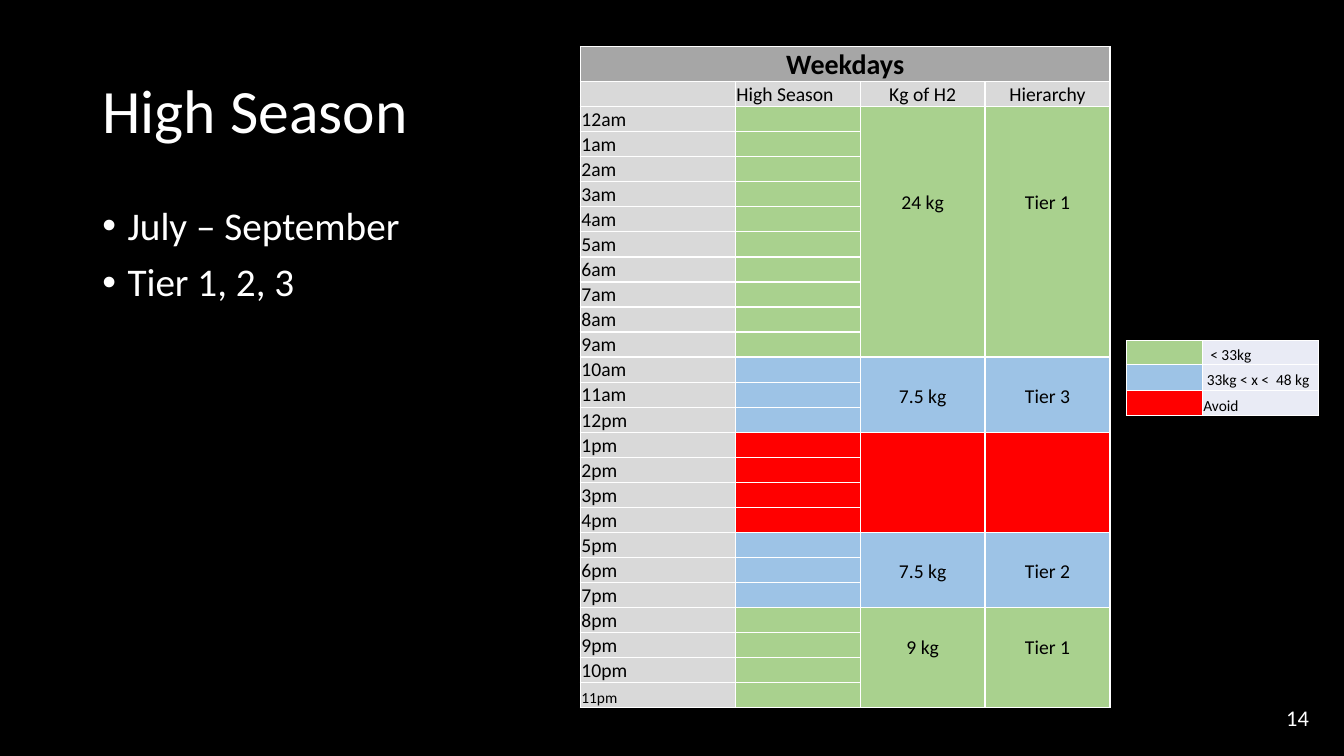
"""Build the High Season slide with its weekday tariff schedule."""
from dataclasses import dataclass

from pptx import Presentation
from pptx.dml.color import RGBColor
from pptx.enum.text import MSO_ANCHOR, PP_ALIGN
from pptx.oxml.xmlchemy import OxmlElement
from pptx.slide import Slide
from pptx.util import Pt


@dataclass(frozen=True)
class Theme:
    """Colours, typeface and type sizes."""
    font: str = "Calibri"
    background: str = "000000"
    light: str = "FFFFFF"
    dark: str = "000000"
    banner: str = "A6A6A6"
    label: str = "D9D9D9"
    legend: str = "E9EBF5"
    green: str = "A9D18E"
    blue: str = "9DC3E6"
    red: str = "FF0000"
    title_size: float = 44
    body_size: float = 28
    number_size: float = 16
    banner_size: float = 20
    table_size: float = 14
    small_size: float = 11
    cell_margin: float = 0.7
    border: float = 1


@dataclass
class SlideBuilder:
    """Draw styled elements on the current slide."""
    theme: Theme
    slide: Slide

    def background(self):
        """Fill the slide background."""
        fill = self.slide.background.fill
        fill.solid()
        fill.fore_color.rgb = RGBColor.from_string(self.theme.background)

    def style(self, paragraph, size, color, bold=False):
        """Format every run of a paragraph."""
        for run in paragraph.runs:
            run.font.name = self.theme.font
            run.font.size = Pt(size)
            run.font.bold = bold
            run.font.color.rgb = RGBColor.from_string(color)

    def title(self, text, left, top, width, height):
        """Place and format the title placeholder."""
        shape = self.slide.shapes.title
        shape.left, shape.top = Pt(left), Pt(top)
        shape.width, shape.height = Pt(width), Pt(height)
        shape.text_frame.text = text
        shape.text_frame.vertical_anchor = MSO_ANCHOR.MIDDLE
        paragraph = shape.text_frame.paragraphs[0]
        paragraph.alignment = PP_ALIGN.LEFT
        paragraph.line_spacing = 0.9
        self.style(paragraph, self.theme.title_size, self.theme.light)

    def text_box(self, text, left, top, width, height):
        """Add a wrapping text box and return its text frame."""
        shape = self.slide.shapes.add_textbox(Pt(left), Pt(top), Pt(width), Pt(height))
        shape.text_frame.word_wrap = True
        shape.text_frame.text = text
        return shape.text_frame

    def bullets(self, lines, left, top, width, height):
        """Add a bulleted list."""
        text_frame = self.text_box("\n".join(lines), left, top, width, height)
        for index, paragraph in enumerate(text_frame.paragraphs):
            properties = paragraph._p.get_or_add_pPr()
            properties.set("marL", str(Pt(18)))
            properties.set("indent", str(-Pt(18)))
            bullet_font = OxmlElement("a:buFont")
            bullet_font.set("typeface", "Arial")
            bullet = OxmlElement("a:buChar")
            bullet.set("char", "•")
            properties.extend([bullet_font, bullet])
            paragraph.line_spacing = 0.9
            if index:
                paragraph.space_before = Pt(10)
            self.style(paragraph, self.theme.body_size, self.theme.light)

    def page_number(self, text, left, top, width, height):
        """Add the right-aligned page number."""
        text_frame = self.text_box(text, left, top, width, height)
        text_frame.vertical_anchor = MSO_ANCHOR.MIDDLE
        text_frame.paragraphs[0].alignment = PP_ALIGN.RIGHT
        self.style(text_frame.paragraphs[0], self.theme.number_size, self.theme.light)

    def table(self, left, top, widths, heights):
        """Add an unbanded table with the given columns and rows."""
        frame = self.slide.shapes.add_table(
            len(heights), len(widths), Pt(left), Pt(top), Pt(sum(widths)), Pt(sum(heights)))
        table = frame.table
        table.first_row = table.horz_banding = False
        for column, width in zip(table.columns, widths):
            column.width = Pt(width)
        for row, height in zip(table.rows, heights):
            row.height = Pt(height)
        return table

    def borders(self, cell):
        """Outline all four sides of a cell."""
        properties = cell._tc.get_or_add_tcPr()
        for side in ("a:lnL", "a:lnR", "a:lnT", "a:lnB"):
            line = OxmlElement(side)
            line.set("w", str(Pt(self.theme.border)))
            fill = OxmlElement("a:solidFill")
            color = OxmlElement("a:srgbClr")
            color.set("val", self.theme.light)
            fill.append(color)
            line.append(fill)
            properties.append(line)

    def cell(self, cell, fill, text="", size=None, bold=False,
             alignment=PP_ALIGN.LEFT, indent=0, lift=0):
        """Fill, outline and label a table cell."""
        size = size or self.theme.table_size
        self.borders(cell)
        cell.fill.solid()
        cell.fill.fore_color.rgb = RGBColor.from_string(fill)
        cell.margin_left = Pt(self.theme.cell_margin + indent)
        cell.margin_right = cell.margin_top = Pt(self.theme.cell_margin)
        cell.margin_bottom = Pt(lift)
        cell.vertical_anchor = MSO_ANCHOR.BOTTOM
        cell.text_frame.text = text
        paragraph = cell.text_frame.paragraphs[0]
        paragraph.alignment = alignment
        self.style(paragraph, size, self.theme.dark, bold)
        if not text:
            end = OxmlElement("a:endParaRPr")
            end.set("sz", str(int(size * 100)))
            paragraph._p.append(end)

    def schedule(self, headings, periods, left, top):
        """Add the hourly table with one merged block per period."""
        theme = self.theme
        table = self.table(left, top, [110.7, 89.2, 89.2, 89.2], [25.2] + [17.9] * 25)
        for column, heading in enumerate(headings):
            self.cell(table.cell(0, column), theme.banner, "" if column else "Weekdays",
                      theme.banner_size, True, PP_ALIGN.CENTER)
            self.cell(table.cell(1, column), theme.label, heading,
                      alignment=PP_ALIGN.CENTER if column > 1 else PP_ALIGN.LEFT)
        table.cell(0, 0).merge(table.cell(0, 3))
        hour = 0
        for hours, color, mass, tier, lift in periods:
            first = hour + 2
            for row in range(first, first + hours):
                label = f"{hour % 12 or 12}{'am' if hour < 12 else 'pm'}"
                size = theme.small_size if hour == 23 else theme.table_size
                self.cell(table.cell(row, 0), theme.label, label, size)
                self.cell(table.cell(row, 1), color)
                for column, text in ((2, mass), (3, tier)):
                    self.cell(table.cell(row, column), color, text if row == first else "",
                              alignment=PP_ALIGN.CENTER, lift=lift if row == first else 0)
                hour += 1
            for column in (2, 3):
                table.cell(first, column).merge(table.cell(first + hours - 1, column))

    def legend(self, entries, left, top):
        """Add the colour key."""
        table = self.table(left, top, [54.2, 83], [16.9, 18.5, 18])
        for row, (color, text, indent) in enumerate(entries):
            self.cell(table.cell(row, 0), color, size=self.theme.small_size)
            self.cell(table.cell(row, 1), self.theme.legend, text,
                      self.theme.small_size, indent=indent)


def main():
    """Assemble and save the slide."""
    theme = Theme()
    presentation = Presentation()
    presentation.slide_width, presentation.slide_height = Pt(960), Pt(540)
    slide = presentation.slides.add_slide(presentation.slide_layouts[5])
    builder = SlideBuilder(theme, slide)
    builder.background()
    builder.title("High Season", 66, 28.8, 828, 104.4)
    builder.bullets(["July – September", "Tier 1, 2, 3"], 66, 144, 397, 381)
    builder.page_number("14", 726, 498.5, 216, 28.8)
    builder.schedule(["", "High Season", "Kg of H2", "Hierarchy"], [
        (10, theme.green, "24 kg", "Tier 1", 102),
        (3, theme.blue, "7.5 kg", "Tier 3", 17),
        (4, theme.red, "", "", 0),
        (3, theme.blue, "7.5 kg", "Tier 2", 17),
        (4, theme.green, "9 kg", "Tier 1", 34),
    ], 414.6, 33.1)
    builder.legend([
        (theme.green, "< 33kg", 5),
        (theme.blue, "33kg < x <  48 kg", 2.5),
        (theme.red, "Avoid", 0),
    ], 804.6, 243.3)
    presentation.save("out.pptx")


if __name__ == "__main__":
    main()
